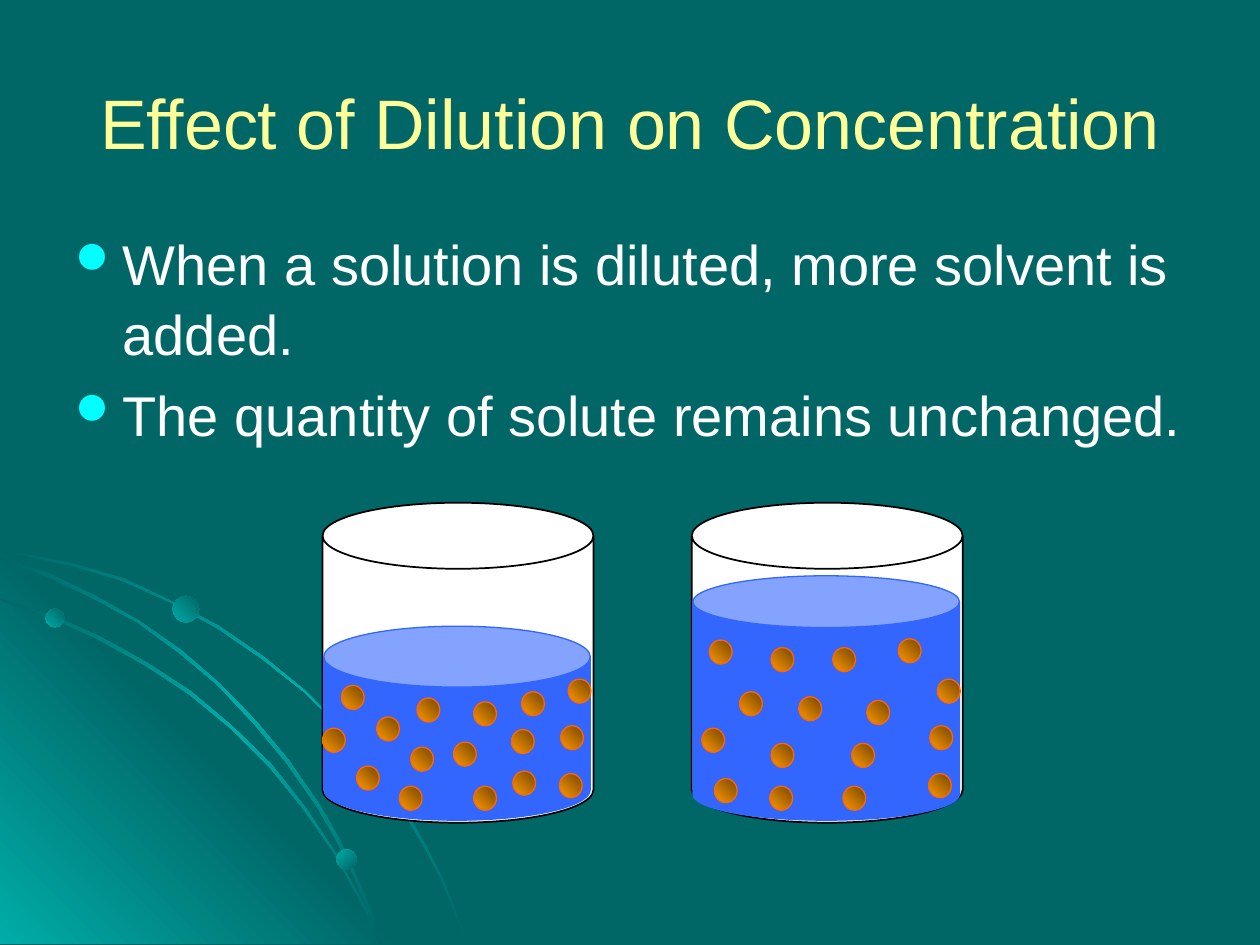
from lxml.etree import SubElement
from pptx import Presentation
from pptx.dml.color import RGBColor
from pptx.enum.shapes import MSO_SHAPE as Preset
from pptx.enum.text import MSO_ANCHOR as Anchor, PP_ALIGN as Align
from pptx.oxml.ns import qn
from pptx.util import Inches, Pt

BACKDROP = RGBColor(0x00, 0x66, 0x66)
GLOW = RGBColor(0x00, 0xAC, 0xA8)
TITLE = RGBColor(0xFF, 0xFF, 0x99)
WHITE = RGBColor(0xFF, 0xFF, 0xFF)
BULLET = RGBColor(0x00, 0xFF, 0xFF)
BLACK = RGBColor(0x00, 0x00, 0x00)
WATER = RGBColor(0x33, 0x66, 0xFF)
SOLUTE = RGBColor(0xFF, 0x99, 0x00)
SOLUTE_DARK = RGBColor(0x76, 0x47, 0x00)
SOLUTE_EDGE = RGBColor(0xFF, 0x66, 0x00)

# The slide is a grid of 1000 columns by 750 rows
CELL = Inches(0.01)
COLUMNS, ROWS = 1000, 750

# Outlines of the sweeping arcs, as (column, row)
ARCS = {
    "outer": [
        (57, 447), (28, 441), (0, 435), (0, 438), (28, 443), (56, 449),
        (97, 461), (135, 478), (173, 499), (208, 523), (241, 549), (271, 579),
        (298, 612), (323, 649), (337, 673), (350, 698), (360, 723), (370, 749),
        (372, 749), (362, 723), (352, 698), (339, 673), (325, 648), (300, 611),
        (272, 578), (242, 548), (209, 521), (174, 497), (136, 477), (98, 459)],
    "inner": [
        (285, 714), (294, 732), (301, 749), (303, 749), (296, 730), (286, 712),
        (266, 676), (242, 640), (215, 606), (184, 576), (152, 549), (117, 526),
        (79, 505), (41, 488), (0, 475), (0, 477), (39, 490), (77, 507),
        (115, 528), (150, 551), (183, 578), (213, 608), (240, 641), (265, 677)],
    "middle": [
        (0, 442), (0, 444), (36, 457), (74, 475), (109, 494), (142, 518),
        (173, 544), (202, 575), (227, 605), (252, 641), (267, 667), (280, 694),
        (292, 722), (301, 749), (303, 749), (294, 720), (282, 693), (269, 665),
        (254, 639), (229, 603), (204, 573), (175, 543), (144, 516), (111, 493),
        (76, 473), (39, 455)],
}
CORNER = [(322, 749), (0, 749), (0, 427)]
BEADS = [(36, 483, 15, 315), (267, 674, 16, 45), (137, 473, 21, 315)]

# Each beaker: left column, water top row, water lid ratio, solute particles
BEAKERS = [
    (256, 497, 0.314, [
        (271, 544), (299, 569), (331, 554), (256, 578), (283, 608), (317, 624),
        (326, 593), (376, 557), (376, 624), (360, 589), (414, 549), (406, 579),
        (445, 576), (451, 539), (407, 612), (444, 614)]),
    (549, 457, 0.212, [
        (563, 508), (587, 549), (612, 514), (557, 578), (567, 618), (611, 624),
        (612, 590), (661, 514), (669, 624), (634, 553), (713, 507), (688, 556),
        (738, 576), (744, 539), (676, 590), (737, 614)]),
]


class SlidePainter:
    font = "Arial"

    def __init__(self, slide):
        self.slide = slide
        backdrop = slide.background.fill
        backdrop.solid()
        backdrop.fore_color.rgb = BACKDROP

    def paint(self, shape, colors, angle=0, edge=None, width=0.75):
        """One colour gives a solid fill, several an even gradient."""
        shape.shadow.inherit = False
        if len(colors) == 1:
            shape.fill.solid()
            shape.fill.fore_color.rgb = colors[0]
        else:
            shape.fill.gradient()
            shape.fill.gradient_angle = 360 - angle
            stops = next(shape._element.iter(qn("a:gsLst")))
            for stop in list(stops):
                stops.remove(stop)
            for i, color in enumerate(colors):
                position = str(100000 * i // (len(colors) - 1))
                stop = SubElement(stops, qn("a:gs"), pos=position)
                SubElement(stop, qn("a:srgbClr"), val=str(color))
        if edge is None:
            shape.line.fill.background()
        else:
            shape.line.color.rgb = edge
            shape.line.width = Pt(width)

    def preset(self, kind, box, colors, ratio=None, **look):
        shape = self.slide.shapes.add_shape(kind, *(CELL * n for n in box))
        if ratio is not None:
            shape.adjustments[0] = ratio
        self.paint(shape, colors, **look)

    def outline(self, points, colors, angle):
        builder = self.slide.shapes.build_freeform(*points[0], scale=CELL)
        builder.add_line_segments(points[1:], close=True)
        self.paint(builder.convert_to_shape(), colors, angle)

    def text(self, box, lines, size, color, anchor, bulleted=False, **layout):
        frame = self.slide.shapes.add_textbox(*(CELL * n for n in box)).text_frame
        frame.word_wrap = True
        frame.vertical_anchor = anchor
        for i, line in enumerate(lines):
            paragraph = frame.paragraphs[0] if i == 0 else frame.add_paragraph()
            for name, value in layout.items():
                setattr(paragraph, name, value)
            run = paragraph.add_run()
            run.text = line
            run.font.color.rgb = color
            for name, value in {"name": self.font, "size": Pt(size)}.items():
                setattr(run.font, name, value)
            if bulleted:
                self.bullet(paragraph)

    def bullet(self, paragraph):
        props = paragraph._p.get_or_add_pPr()
        hang = CELL * 37.5
        props.set("marL", str(int(hang)))
        props.set("indent", str(int(-hang)))
        SubElement(SubElement(props, qn("a:buClr")), qn("a:srgbClr"), val=str(BULLET))
        SubElement(props, qn("a:buSzPct"), val="80000")
        SubElement(props, qn("a:buFont"), typeface="Wingdings", charset="2")
        SubElement(props, qn("a:buChar"), char="l")


def main():
    deck = Presentation()
    deck.slide_width, deck.slide_height = CELL * COLUMNS, CELL * ROWS
    painter = SlidePainter(deck.slides.add_slide(deck.slide_layouts[6]))

    # Glowing corner with arcs and beads
    arc_colors = [BACKDROP, GLOW, BACKDROP]
    painter.outline(ARCS["outer"], arc_colors, 45)
    painter.outline(CORNER, [GLOW, BACKDROP, GLOW], 315)
    for name in ("inner", "middle"):
        painter.outline(ARCS[name], arc_colors, 45)
    for left, top, size, angle in BEADS:
        painter.preset(Preset.OVAL, (left, top, size, size),
                       [GLOW, BACKDROP], angle=angle)

    # Title and statements
    painter.text((50, 31, 900, 131), ["Effect of Dilution on Concentration"],
                 40, TITLE, Anchor.MIDDLE, alignment=Align.CENTER)
    painter.text((50, 175, 910, 200),
                 ["When a solution is diluted, more solvent is added.",
                  "The quantity of solute remains unchanged."],
                 32, WHITE, Anchor.TOP, bulleted=True,
                 alignment=Align.LEFT, space_before=Pt(6.4), line_spacing=1.04)

    # Beakers before and after dilution
    for left, water_top, lid, particles in BEAKERS:
        painter.preset(Preset.CAN, (left, 399, 215, 254), [WHITE],
                       ratio=0.244, edge=BLACK, width=1)
        painter.preset(Preset.CAN, (left + 1, water_top, 211.5, 651 - water_top),
                       [WATER], ratio=lid, edge=WATER)
        for column, row in particles:
            painter.preset(Preset.OVAL, (column, row, 18, 19),
                           [SOLUTE, SOLUTE_DARK], angle=315, edge=SOLUTE_EDGE)

    deck.save("out.pptx")


if __name__ == "__main__":
    main()
